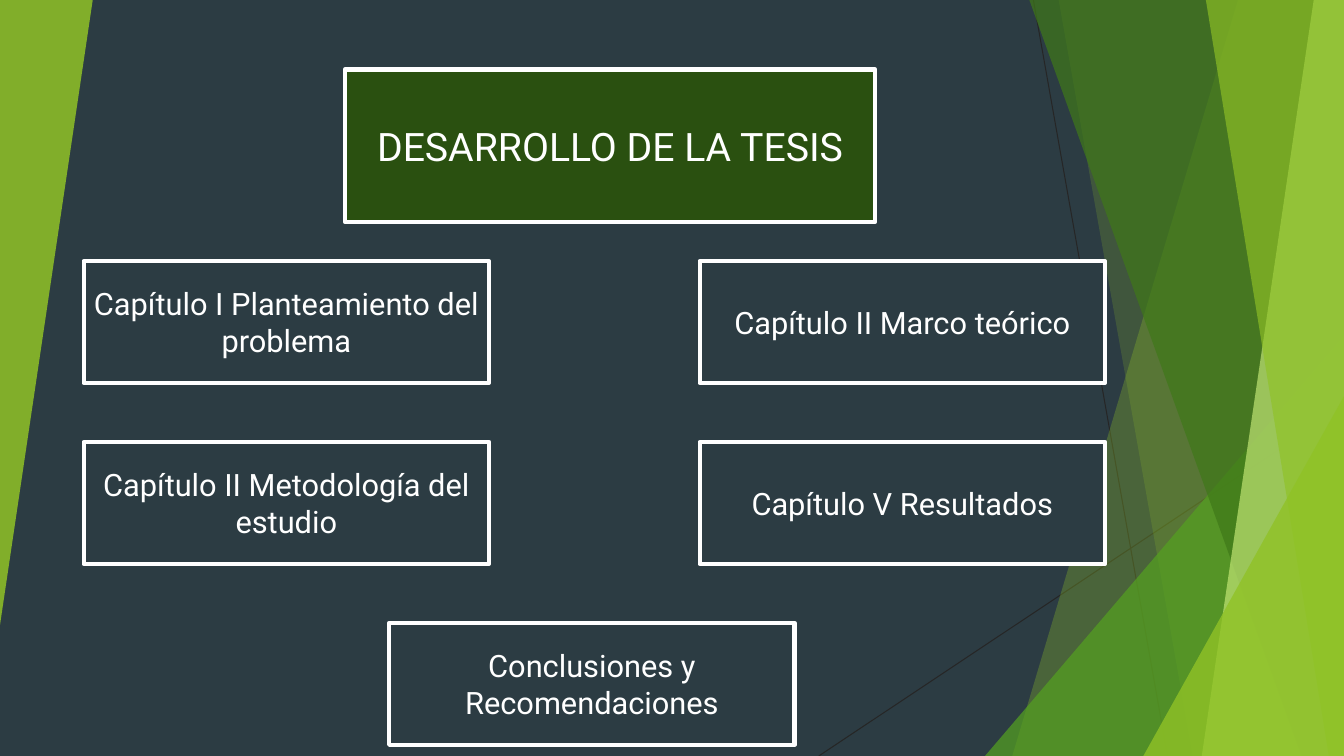
from dataclasses import dataclass

from lxml import etree
from pptx import Presentation
from pptx import util as u
from pptx.dml.color import RGBColor
from pptx.enum import shapes, text
from pptx.oxml.ns import qn

WIDTH, HEIGHT = u.Inches(13.33), u.Inches(7.5)
SLATE, WHITE, LIME = "2C3C43", "FFFFFF", "90C226"


# Every length is a percentage of the slide's width or height.
@dataclass
class Ray:
    start: tuple[float, float]
    end: tuple[float, float]


@dataclass
class Pane:
    """A slanted band that reaches from its left edge to the slide's right side."""
    top_x: float
    bottom_x: float
    colour: str
    opacity: int


@dataclass
class Wedge:
    left: float
    top: float
    width: float
    height: float
    colour: str
    opacity: int
    rotation: int = 0


@dataclass
class Card:
    left: float
    top: float
    width: float
    height: float
    label: str
    size: int = 22
    colour: str = SLATE


def across(share: float) -> int:
    return round(WIDTH * share / 100)


def down(share: float) -> int:
    return round(HEIGHT * share / 100)


def paint(target, colour: str, opacity: int = 100) -> None:
    """Give a fill a solid colour, see-through when opacity is below 100."""
    target.solid()
    target.fore_color.rgb = RGBColor.from_string(colour)
    if opacity < 100:
        tint = target._xPr.find(qn("a:solidFill"))[0]
        etree.SubElement(tint, qn("a:alpha"), val=str(opacity * 1000))


def draw_ray(page, ray: Ray) -> None:
    line = page.shapes.add_connector(
        shapes.MSO_CONNECTOR.STRAIGHT,
        across(ray.start[0]), down(ray.start[1]), across(ray.end[0]), down(ray.end[1]))
    paint(line.line.fill, "262626")
    line.line.width = u.Pt(0.75)
    etree.SubElement(line._element.spPr, qn("a:effectLst"))


def finish_facet(facet, colour: str, opacity: int) -> None:
    facet.shadow.inherit = False
    paint(facet.fill, colour, opacity)
    facet.line.fill.background()


def draw_pane(page, pane: Pane) -> None:
    outline = page.shapes.build_freeform(across(pane.top_x), 0)
    outline.add_line_segments(
        [(WIDTH, 0), (WIDTH, HEIGHT), (across(pane.bottom_x), HEIGHT)], close=True)
    finish_facet(outline.convert_to_shape(), pane.colour, pane.opacity)


def add_preset(page, kind, part: Wedge | Card):
    return page.shapes.add_shape(
        kind, across(part.left), down(part.top), across(part.width), down(part.height))


def draw_wedge(page, wedge: Wedge) -> None:
    facet = add_preset(page, shapes.MSO_SHAPE.ISOSCELES_TRIANGLE, wedge)
    facet.adjustments[0] = 1
    facet.rotation = wedge.rotation
    finish_facet(facet, wedge.colour, wedge.opacity)


def draw_card(page, card: Card) -> None:
    box = add_preset(page, shapes.MSO_SHAPE.RECTANGLE, card)
    box.shadow.inherit = False
    paint(box.fill, card.colour)
    paint(box.line.fill, WHITE)
    box.line.width = u.Pt(3)
    box.text_frame.word_wrap = True
    box.text_frame.vertical_anchor = text.MSO_ANCHOR.MIDDLE
    para = box.text_frame.paragraphs[0]
    para.alignment = text.PP_ALIGN.CENTER
    span = para.add_run()
    span.text = card.label
    span.font.name = "Roboto"
    span.font.size = u.Pt(card.size)
    paint(span.font.fill, WHITE)


# Backdrop, from back to front
BACKDROP = [
    Ray((76.89, 0), (86.87, 100)),
    Ray((100, 53.73), (60.92, 100)),
    Pane(92.12, 75.32, LIME, 30),
    Pane(78.77, 88.75, LIME, 20),
    Wedge(73.29, 44.4, 26.71, 55.6, "54A021", 72),
    Pane(76.59, 96.85, "3F7819", 70),
    Pane(97.75, 89.42, "C0E474", 70),
    Pane(89.72, 98.87, LIME, 65),
    Wedge(85.07, 52.4, 14.93, 47.6, LIME, 80),
    Wedge(0, 0, 6.9, 82.67, LIME, 85, 180),
]

# Title and chapters: a column on each side, the conclusions between them
TITLE = Card(25.66, 9.2, 39.46, 20.13, "DESARROLLO DE LA TESIS", 28, "2A5010")
LEFT, RIGHT, MIDDLE = 6.23, 52.06, 28.96
FIRST_ROW, ROW_STEP = 34.53, 23.93
CHAPTERS = [
    (LEFT, 0, "Capítulo I Planteamiento del problema"),
    (RIGHT, 0, "Capítulo II Marco teórico"),
    (LEFT, 1, "Capítulo II Metodología del estudio"),
    (RIGHT, 1, "Capítulo V Resultados"),
    (MIDDLE, 2, "Conclusiones y Recomendaciones"),
]


def main() -> None:
    deck = Presentation()
    deck.slide_width, deck.slide_height = WIDTH, HEIGHT
    page = deck.slides.add_slide(deck.slide_layouts[6])
    paint(page.background.fill, SLATE)

    painters = {Ray: draw_ray, Pane: draw_pane, Wedge: draw_wedge}
    for part in BACKDROP:
        painters[type(part)](page, part)

    draw_card(page, TITLE)
    for left, row, label in CHAPTERS:
        draw_card(page, Card(left, FIRST_ROW + row * ROW_STEP, 30.16, 16.13, label))

    deck.save("out.pptx")


if __name__ == "__main__":
    main()
